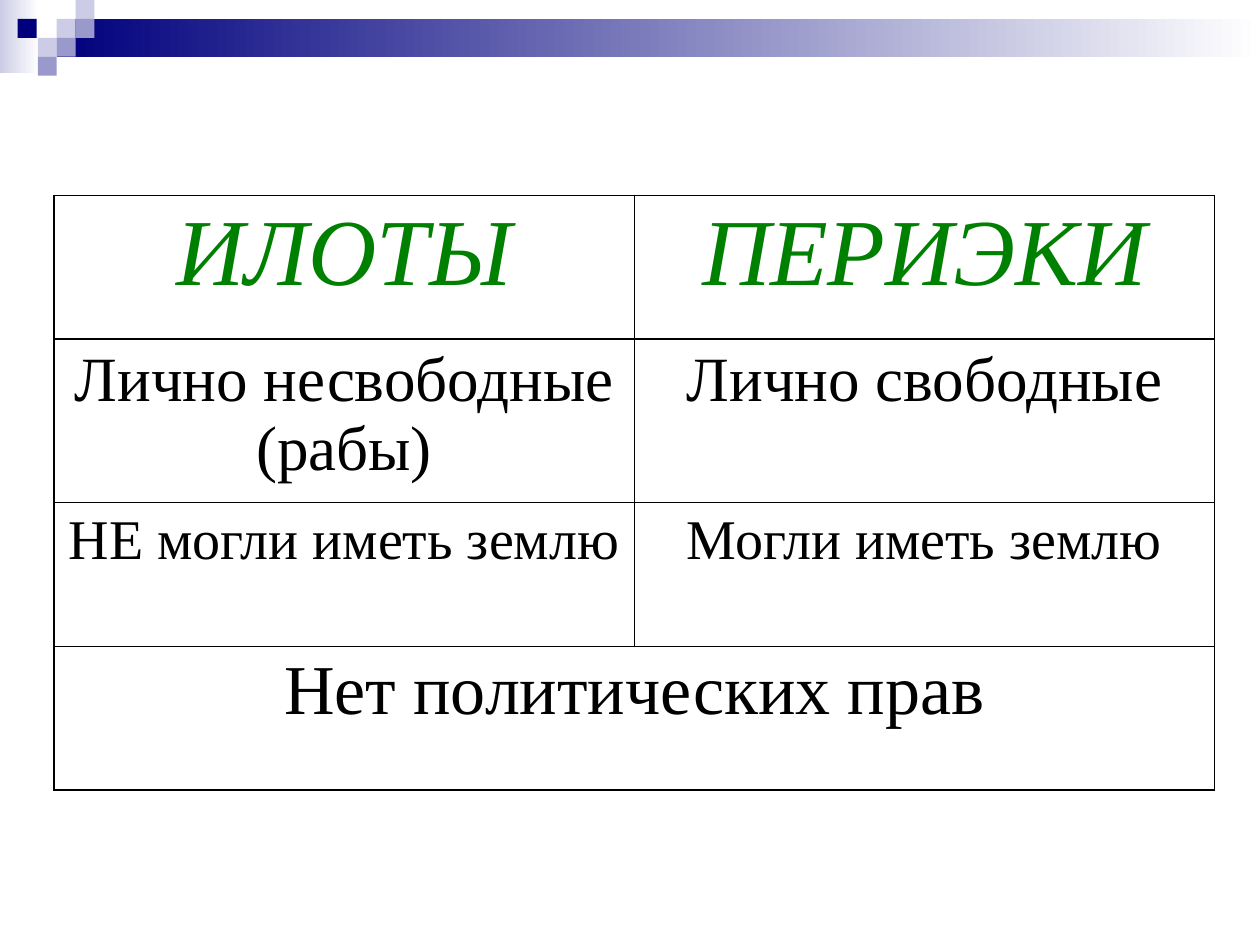
import pptx
import pptx.dml.color
import pptx.enum.shapes
import pptx.enum.text
import pptx.oxml.ns
import pptx.util
from lxml import etree

Inches = pptx.util.Inches
Pt = pptx.util.Pt
RGBColor = pptx.dml.color.RGBColor

NAVY = RGBColor(0x00, 0x00, 0x7D)
LILAC = RGBColor(0x99, 0x99, 0xCC)
PALE = RGBColor(0xCC, 0xCC, 0xE6)
WHITE = RGBColor(0xFF, 0xFF, 0xFF)
GREEN = RGBColor(0x00, 0x80, 0x00)
BLACK = RGBColor(0x00, 0x00, 0x00)

FONT = "Times New Roman"
SQUARE = 0.15

# Left, top and colour of each small square, from back to front
SQUARES = [
    (0.45, 0.15, PALE), (0.6, 0, PALE), (0.6, 0.15, LILAC),
    (0.3, 0.3, PALE), (0.14, 0.15, NAVY), (0.45, 0.3, LILAC),
    (0.3, 0.45, LILAC),
]

# Height, text size, colour, italic and texts of each row
ROWS = [
    (1.14, 54, GREEN, True, ["ИЛОТЫ", "ПЕРИЭКИ"]),
    (1.3, 36, BLACK, False, ["Лично несвободные (рабы)", "Лично свободные"]),
    (1.14, 32, BLACK, False, ["НЕ могли иметь землю", "Могли иметь землю"]),
    (1.14, 40, BLACK, False, ["Нет политических прав"]),
]


def add_rect(s, left, top, width, height, color, fade_to=None):
    sp = s.shapes.add_shape(pptx.enum.shapes.MSO_SHAPE.RECTANGLE, Inches(left),
                            Inches(top), Inches(width), Inches(height))
    sp.shadow.inherit = False
    sp.line.fill.background()
    if fade_to is None:
        sp.fill.solid()
        sp.fill.fore_color.rgb = color
    else:
        sp.fill.gradient()
        sp.fill.gradient_angle = 0
        for stop, rgb in zip(sp.fill.gradient_stops, (color, fade_to)):
            stop.color.rgb = rgb


def add_header(s, left, top, width):
    # Fading bands
    add_rect(s, left, top, 0.31, 0.58, PALE, WHITE)
    add_rect(s, left + 0.45, top + 0.15, width - 0.45, 0.3, NAVY, WHITE)
    # Mosaic of squares
    for x, y, color in SQUARES:
        add_rect(s, left + x, top + y, SQUARE, SQUARE, color)


def set_borders(cell):
    qn = pptx.oxml.ns.qn
    tcPr = cell._tc.get_or_add_tcPr()
    for side in ("a:lnL", "a:lnR", "a:lnT", "a:lnB"):
        ln = etree.SubElement(tcPr, qn(side), w=str(Pt(1)))
        fill = etree.SubElement(ln, qn("a:solidFill"))
        etree.SubElement(fill, qn("a:srgbClr"), val=str(BLACK))


def add_comparison(s, left, top, width):
    height = sum(row[0] for row in ROWS)
    table = s.shapes.add_table(len(ROWS), 2, Inches(left), Inches(top),
                               Inches(width), Inches(height)).table
    table.first_row = table.horz_banding = False
    for i, (row_height, size, color, italic, texts) in enumerate(ROWS):
        table.rows[i].height = Inches(row_height)
        for cell in table.rows[i].cells:
            set_borders(cell)
            cell.fill.background()
        # A single text spans the whole row
        if len(texts) == 1:
            table.cell(i, 0).merge(table.cell(i, 1))
        for j, text in enumerate(texts):
            p = table.cell(i, j).text_frame.paragraphs[0]
            p.text = text
            p.alignment = pptx.enum.text.PP_ALIGN.CENTER
            p.font.name = FONT
            p.font.size = Pt(size)
            p.font.italic = italic
            p.font.color.rgb = color


def main():
    prs = pptx.Presentation()
    prs.slide_width = Inches(10)
    prs.slide_height = Inches(7.5)
    s = prs.slides.add_slide(prs.slide_layouts[6])
    add_header(s, 0, 0, 10)
    add_comparison(s, 0.43, 1.55, 9.21)
    prs.save("out.pptx")


if __name__ == "__main__":
    main()
